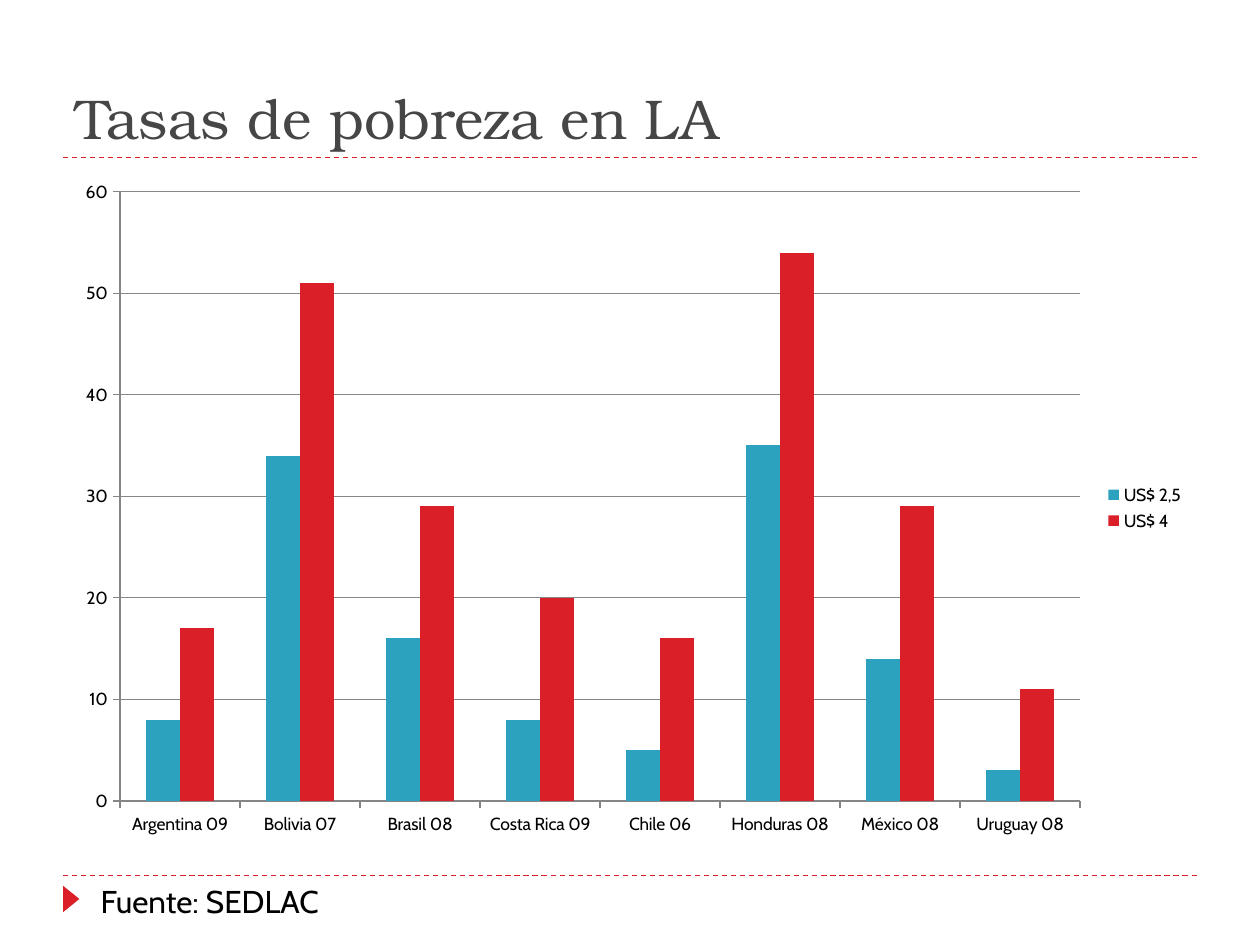
from lxml import etree
from pptx import Presentation
from pptx import util as u
from pptx.chart.data import CategoryChartData
from pptx.dml.color import RGBColor
from pptx.enum import chart as ch, dml, shapes, text
from pptx.oxml.ns import qn

COLORS = {"red": "DA1F28", "blue": "2DA2BF", "title": "464646",
          "text": "000000", "axis": "868686"}
TITLE_FONT, BODY_FONT = "TeX Gyre Bonum", "Cabin"

TITLE = "Tasas de pobreza en LA"
SOURCE = "Fuente: SEDLAC"
COUNTRIES = ["Argentina 09", "Bolivia 07", "Brasil 08", "Costa Rica 09",
             "Chile 06", "Honduras 08", "México 08", "Uruguay 08"]
POVERTY_RATES = [
    ("US$ 2,5", "blue", [8, 34, 16, 8, 5, 35, 14, 3]),
    ("US$ 4", "red", [17, 51, 29, 20, 16, 54, 29, 11]),
]
LEFT, WIDTH = 0.5, 9
RULE_HEIGHTS = [6.95, 1.25]


def rgb(name):
    return RGBColor.from_string(COLORS[name])


def style_font(font, name, size, color):
    font.name, font.size = name, u.Pt(size)
    font.color.rgb = rgb(color)


def place(shape, left, top, width, height):
    shape.left, shape.top = u.Inches(left), u.Inches(top)
    shape.width, shape.height = u.Inches(width), u.Inches(height)


def add_rule(slide, y):
    rule = slide.shapes.add_connector(
        shapes.MSO_CONNECTOR.STRAIGHT, u.Inches(LEFT), u.Inches(y),
        u.Inches(LEFT + WIDTH), u.Inches(y))
    rule.line.color.rgb = rgb("red")
    rule.line.width = u.Pt(0.75)
    rule.line.dash_style = dml.MSO_LINE.DASH
    etree.SubElement(rule._element.spPr, qn("a:effectLst"))


def add_marker(slide):
    marker = slide.shapes.add_shape(
        shapes.MSO_SHAPE.ISOSCELES_TRIANGLE, u.Inches(0.46), u.Inches(7.07),
        u.Inches(0.21), u.Inches(0.13))
    marker.rotation = 90
    marker.shadow.inherit = False
    marker.fill.solid()
    marker.fill.fore_color.rgb = rgb("red")
    marker.line.fill.background()


def add_title(slide):
    title = slide.shapes.title
    place(title, LEFT, 0.17, WIDTH, 1.08)
    frame = title.text_frame
    frame.text = TITLE
    frame.word_wrap = True
    frame.vertical_anchor = text.MSO_ANCHOR.BOTTOM
    paragraph = frame.paragraphs[0]
    paragraph.alignment = text.PP_ALIGN.LEFT
    style_font(paragraph.runs[0].font, TITLE_FONT, 32, "title")


def add_poverty_chart(slide):
    data = CategoryChartData()
    data.categories = COUNTRIES
    for name, _, rates in POVERTY_RATES:
        data.add_series(name, rates)
    chart = slide.shapes.add_chart(
        ch.XL_CHART_TYPE.COLUMN_CLUSTERED, u.Inches(LEFT), u.Inches(1.33),
        u.Inches(WIDTH), u.Inches(5.4), data).chart
    style_font(chart.font, BODY_FONT, 10, "text")
    chart.has_title = False
    chart.has_legend = True
    chart.legend.position = ch.XL_LEGEND_POSITION.RIGHT
    chart.legend.include_in_layout = False

    plot = chart.plots[0]
    plot.gap_width, plot.overlap = 150, 0
    plot.vary_by_categories = False
    for series, (_, color, _) in zip(plot.series, POVERTY_RATES):
        series.format.fill.solid()
        series.format.fill.fore_color.rgb = rgb(color)

    rates = chart.value_axis
    rates.minimum_scale, rates.maximum_scale, rates.major_unit = 0, 60, 10
    rates.has_major_gridlines = True
    lines = [rates.major_gridlines.format.line]
    for axis in (chart.category_axis, rates):
        axis.major_tick_mark = ch.XL_TICK_MARK.OUTSIDE
        lines.append(axis.format.line)
    for line in lines:
        line.color.rgb = rgb("axis")
        line.width = u.Pt(0.75)


def add_source(slide):
    box = slide.shapes.add_textbox(
        u.Inches(0.7), u.Inches(6.95), u.Inches(3.75), u.Inches(0.4))
    frame = box.text_frame
    frame.word_wrap = True
    frame.auto_size = text.MSO_AUTO_SIZE.SHAPE_TO_FIT_TEXT
    frame.text = SOURCE
    style_font(frame.paragraphs[0].runs[0].font, BODY_FONT, 18, "text")


def main():
    presentation = Presentation()
    presentation.slide_width = u.Inches(10)
    presentation.slide_height = u.Inches(7.5)
    slide = presentation.slides.add_slide(presentation.slide_layouts[5])
    for y in RULE_HEIGHTS:
        add_rule(slide, y)
    add_marker(slide)
    add_title(slide)
    add_poverty_chart(slide)
    add_source(slide)
    presentation.save("out.pptx")


if __name__ == "__main__":
    main()
